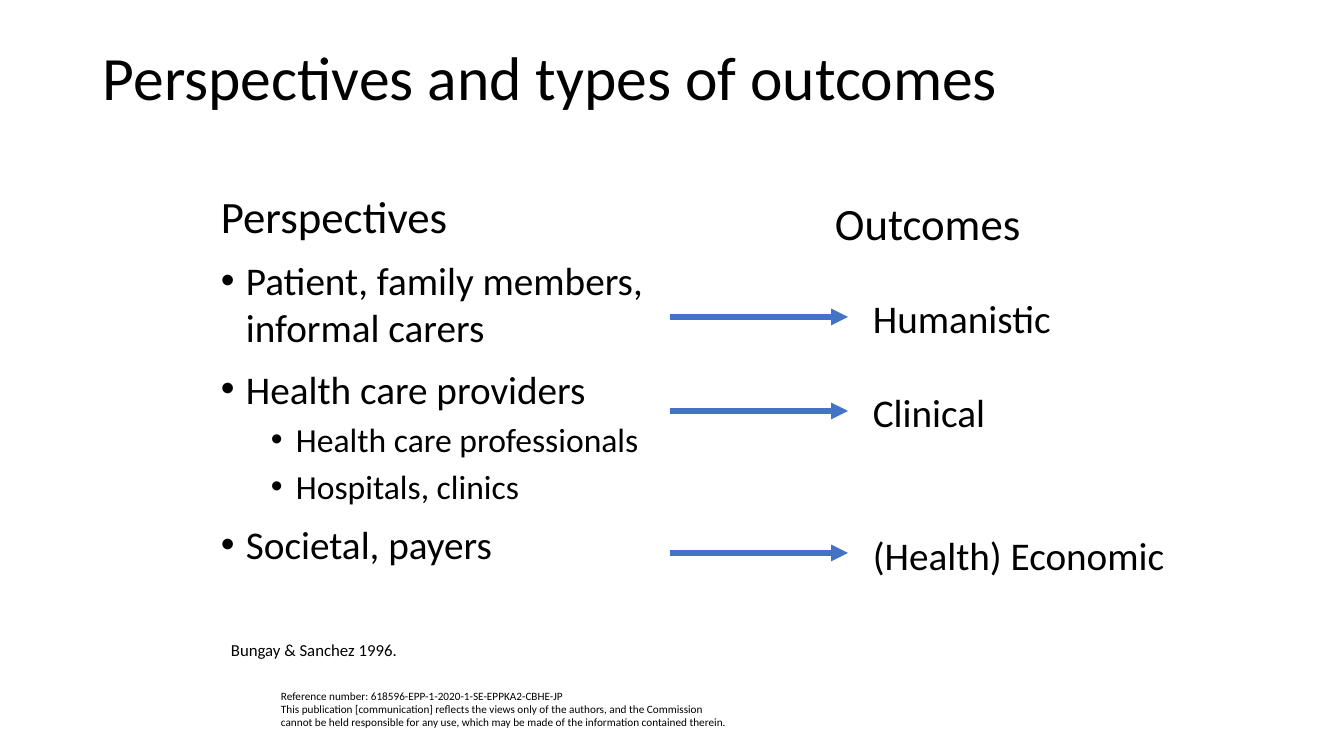
from dataclasses import dataclass
from lxml.etree import SubElement
from pptx import Presentation
from pptx.dml.color import RGBColor
from pptx.enum.shapes import MSO_CONNECTOR
from pptx.enum.text import MSO_ANCHOR
from pptx.oxml.ns import qn
from pptx.util import Pt


@dataclass(frozen=True)
class Theme:
    font: str = "Calibri"
    ink: RGBColor = RGBColor(0, 0, 0)
    arrow: RGBColor = RGBColor(0x44, 0x72, 0xC4)
    title: int = 44
    head: int = 32
    item: int = 28
    sub: int = 24
    cite: int = 12
    fine: int = 8


THEME = Theme()
SCALE = 914400 / 100.8


def px(count):
    return round(count * SCALE)


def style(para, text, size, before=0, line=1.0):
    para.text = text
    para.space_before = Pt(before)
    para.line_spacing = line
    para.font.name = THEME.font
    para.font.size = Pt(size)
    para.font.color.rgb = THEME.ink


def bullet(para, level):
    para.level = level
    props = para._p.get_or_add_pPr()
    props.set("marL", str(px(25 + 50 * level)))
    props.set("indent", str(px(-25)))
    SubElement(props, qn("a:buFont")).set("typeface", "Arial")
    SubElement(props, qn("a:buChar")).set("char", "•")


def frame(slide, left, top, width, height):
    box = slide.shapes.add_textbox(px(left), px(top), px(width), px(height))
    box.text_frame.word_wrap = True
    return box.text_frame


def paras(body, count):
    for _ in range(count - 1):
        body.add_paragraph()
    return body.paragraphs


def label(slide, area, text, size, line=1.0):
    body = frame(slide, *area)
    style(body.paragraphs[0], text, size, line=line)
    return body


def views(slide, area, title, items):
    body = label(slide, area, title, THEME.head)
    for text, level in items:
        para = body.add_paragraph()
        bullet(para, level)
        size, before = ((THEME.item, 10), (THEME.sub, 5))[level]
        style(para, text, size, before)


def stack(slide, area, rows, size):
    body = frame(slide, *area)
    for para, (text, before) in zip(paras(body, len(rows)), rows):
        style(para, text, size, before)


def arrow(slide, left, right, y):
    link = slide.shapes.add_connector(
        MSO_CONNECTOR.STRAIGHT, px(left), px(y), px(right), px(y))
    link.line.color.rgb = THEME.arrow
    link.line.width = Pt(4)
    SubElement(link.line._get_or_add_ln(), qn("a:tailEnd")).set("type", "triangle")
    SubElement(link._element.spPr, qn("a:effectLst"))


def main():
    deck = Presentation()
    deck.slide_width, deck.slide_height = px(1344), px(756)
    slide = deck.slides.add_slide(deck.slide_layouts[6])

    stack(slide, (271, 684, 468, 50), [
        ("Reference number: 618596-EPP-1-2020-1-SE-EPPKA2-CBHE-JP", 0),
        ("This publication [communication] reflects the views only of the authors, "
         "and the Commission cannot be held responsible for any use, which may be "
         "made of the information contained therein.", 0),
    ], THEME.fine)
    title = label(slide, (93, 40, 1159, 82),
                  "Perspectives and types of outcomes", THEME.title, 0.9)
    title.vertical_anchor = MSO_ANCHOR.MIDDLE

    views(slide, (211, 184, 572, 531), "Perspectives", [
        ("Patient, family members, informal carers", 0),
        ("Health care providers", 0),
        ("Health care professionals", 1),
        ("Hospitals, clinics", 1),
        ("Societal, payers", 0),
    ])
    label(slide, (825, 197, 229, 60), "Outcomes", THEME.head, 0.9)
    stack(slide, (863, 289, 314, 295), [
        ("Humanistic", 0),
        ("Clinical", 34),
        ("(Health) Economic", 68),
    ], THEME.item)
    for y in (317, 411, 553):
        arrow(slide, 670, 848, y)
    label(slide, (221, 635, 200, 30), "Bungay & Sanchez 1996.", THEME.cite)

    deck.save("out.pptx")


if __name__ == "__main__":
    main()
